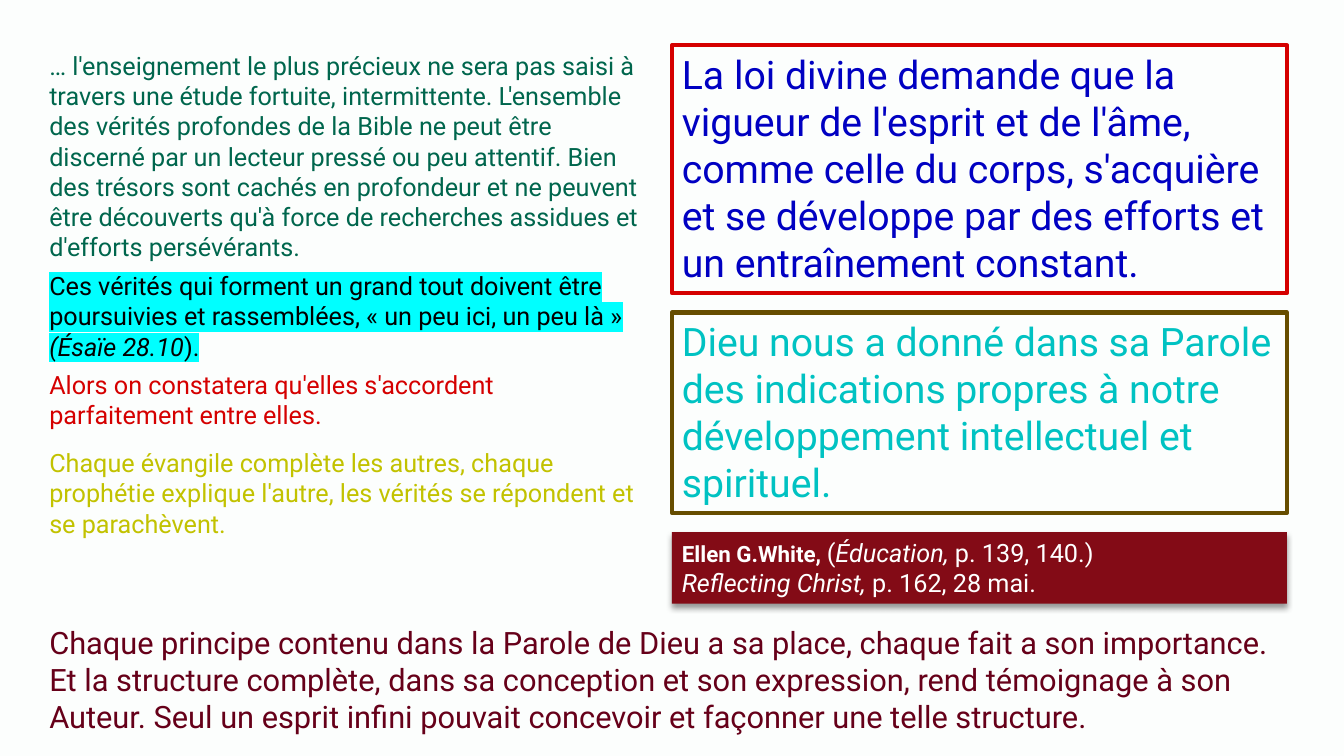
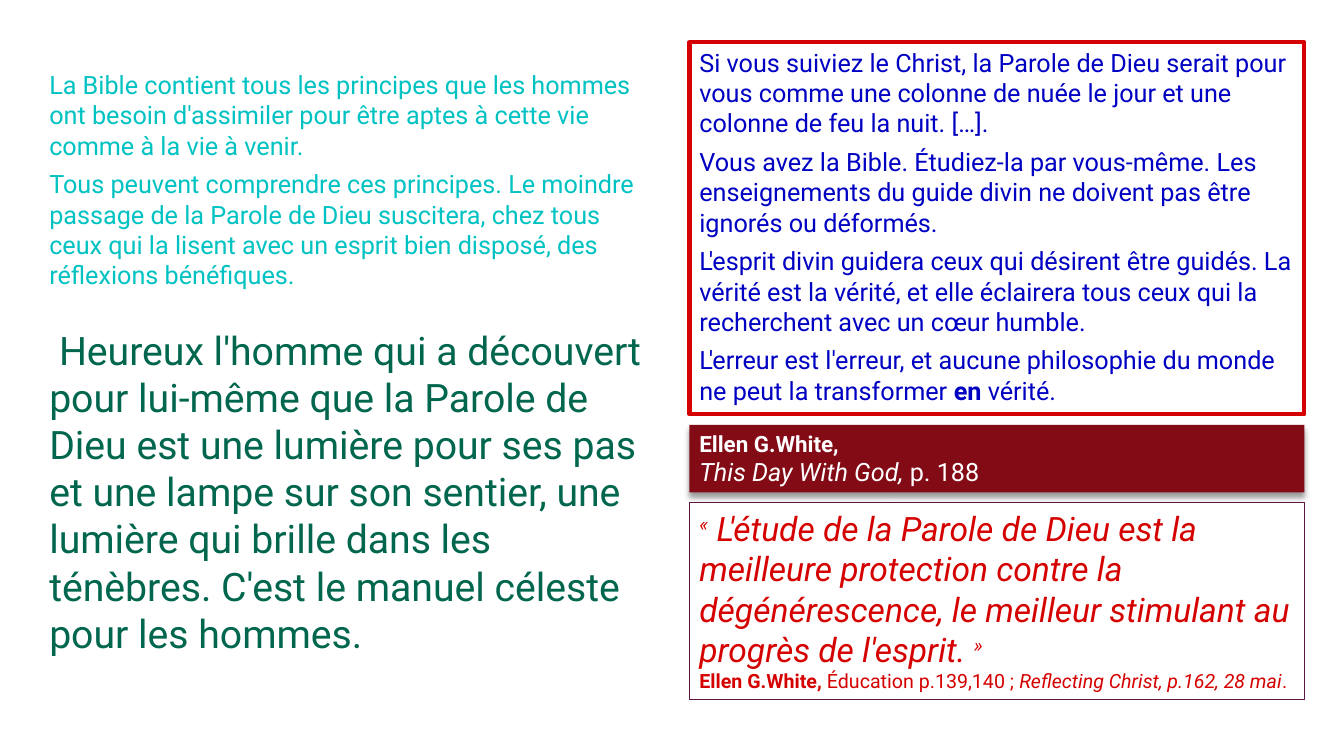
from dataclasses import dataclass

from lxml.etree import SubElement
from pptx import Presentation
from pptx.dml.color import RGBColor as RGB
from pptx.enum.shapes import MSO_SHAPE as SHAPE
from pptx.enum.text import MSO_ANCHOR as ANCHOR, MSO_AUTO_SIZE as AUTO, PP_ALIGN as ALIGN
from pptx.oxml.ns import qn
from pptx.util import Inches, Pt


@dataclass(frozen=True)
class Theme:
    """Colours, font and type sizes shared by the slides."""
    font: str = "Roboto"
    ivory: str = "FCFEFD"
    white: str = "FFFFFF"
    black: str = "000000"
    red: str = "D50000"
    blue: str = "0000C2"
    green: str = "00664D"
    cyan: str = "00C2C2"
    olive: str = "C2C200"
    brown: str = "664D00"
    wine: str = "660019"
    plum: str = "591643"
    band: str = "830B16"
    marker: str = "00FFFF"
    source: int = 14
    author: int = 16
    body: int = 18
    closing: int = 22
    quote: int = 24
    lead: int = 28


T = Theme()
WIDTH, HEIGHT = Inches(13.33), Inches(7.5)
LEFT, COLUMN, FULL = 2.93, 45.75, 92.87
ITALIC, BOLD = dict(italic=True), dict(bold=True)


def across(share):
    """Turn a percentage of the slide's width into a length."""
    return round(WIDTH * share / 100)


def down(share):
    """Turn a percentage of the slide's height into a length."""
    return round(HEIGHT * share / 100)


def add_run(p, text, size=T.body, color=T.black, bold=False, italic=False,
            highlight=None, raised=False):
    """Add one formatted run to a paragraph."""
    r = p.add_run()
    r.text = text
    r.font.size, r.font.bold, r.font.italic = Pt(size), bold, italic
    r.font.color.rgb = RGB.from_string(color)
    rPr = r._r.get_or_add_rPr()
    if highlight:
        mark = SubElement(rPr, qn("a:highlight"))
        SubElement(mark, qn("a:srgbClr"), val=highlight)
    if raised:
        rPr.set("baseline", "30000")
    r.font.name = T.font


def fill_text(sp, paragraphs, space=0, indent=0, **style):
    """Write paragraphs, each a list of strings or (string, format) pairs."""
    tf = sp.text_frame
    tf.word_wrap, tf.auto_size = True, AUTO.SHAPE_TO_FIT_TEXT
    tf.vertical_anchor = ANCHOR.TOP
    for i, runs in enumerate(paragraphs):
        p = tf.add_paragraph() if i else tf.paragraphs[0]
        p.alignment = ALIGN.LEFT
        if i and space:
            p.space_before = Pt(space)
        if indent:
            p._p.get_or_add_pPr().set("indent", str(Pt(indent)))
        for run in runs:
            text, extra = (run, {}) if isinstance(run, str) else run
            add_run(p, text, **{**style, **extra})


def add_text(s, box, paragraphs, **style):
    """Add plain text without a frame."""
    fill_text(s.shapes.add_textbox(*box), paragraphs, **style)


def add_panel(s, box, paragraphs, line, weight=3, **style):
    """Add text in an outlined rectangle."""
    sp = s.shapes.add_shape(SHAPE.RECTANGLE, *box)
    sp.shadow.inherit = False
    sp.fill.background()
    sp.line.color.rgb = RGB.from_string(line)
    sp.line.width = Pt(weight)
    fill_text(sp, paragraphs, **style)


def add_band(s, box, paragraphs):
    """Add a dark source band with a soft shadow."""
    sp = s.shapes.add_shape(SHAPE.RECTANGLE, *box)
    sp.shadow.inherit = False
    sp.fill.solid()
    sp.fill.fore_color.rgb = RGB.from_string(T.band)
    sp.line.fill.background()
    effects = sp._element.spPr.find(qn("a:effectLst"))
    shadow = SubElement(effects, qn("a:outerShdw"), blurRad=str(Pt(4)),
                        dist=str(Pt(3)), dir="5400000", rotWithShape="0")
    tint = SubElement(shadow, qn("a:srgbClr"), val=T.black)
    SubElement(tint, qn("a:alpha"), val="40000")
    fill_text(sp, paragraphs, color=T.white)


def stack(left, top, gap, heights, width=COLUMN):
    """Return boxes stacked down a column with equal gaps."""
    return [(across(left), down(top + sum(heights[:i]) + gap * i),
             across(width), down(height)) for i, height in enumerate(heights)]


def add_slide(prs, background):
    """Add a blank slide with a plain background."""
    s = prs.slides.add_slide(prs.slide_layouts[6])
    s.background.fill.solid()
    s.background.fill.fore_color.rgb = RGB.from_string(background)
    return s


def build_study(prs):
    """Build the slide on studying the Bible with effort."""
    s = add_slide(prs, T.ivory)
    truths, gospels = stack(LEFT, 6, 0.53, [52, 13.47])
    law, word, source = stack(50, 6, 2.53, [32.8, 26.53, 9.47])
    closing, = stack(LEFT, 81.87, 0, [16.13], FULL)
    marked = dict(color=T.black, highlight=T.marker)
    add_panel(s, law, [[
        "La loi divine demande que la vigueur de l'esprit et de l'âme, comme celle du corps, "
        "s'acquière et se développe par des efforts et un entraînement constant."]],
        line=T.red, size=T.lead, color=T.blue)
    add_text(s, truths, [
        ["… l'enseignement le plus précieux ne sera pas saisi à travers une étude fortuite, "
         "intermittente. L'ensemble des vérités profondes de la Bible ne peut être discerné "
         "par un lecteur pressé ou peu attentif. Bien des trésors sont cachés en profondeur "
         "et ne peuvent être découverts qu'à force de recherches assidues et d'efforts "
         "persévérants."],
        [("Ces vérités qui forment un grand tout doivent être poursuivies et rassemblées, "
          "« un peu ici, un peu là » ", marked),
         ("(Ésaïe 28.10", {**marked, **ITALIC}), (").", marked)],
        [("Alors on constatera qu'elles s'accordent parfaitement entre elles.",
          dict(color=T.red))]],
        space=6, color=T.green)
    add_panel(s, word, [[
        "Dieu nous a donné dans sa Parole des indications propres à notre développement "
        "intellectuel et spirituel."]],
        line=T.brown, size=T.lead, color=T.cyan)
    add_band(s, source, [
        [("Ellen G.White, ", dict(size=T.author, bold=True)), "(", ("Éducation,", ITALIC),
         " p. 139, 140.)"],
        [("Reflecting Christ,", ITALIC), " p. 162, 28 mai."]])
    add_text(s, gospels, [[
        "Chaque évangile complète les autres, chaque prophétie explique l'autre, les vérités "
        "se répondent et se parachèvent."]], color=T.olive)
    add_text(s, closing, [[
        "Chaque principe contenu dans la Parole de Dieu a sa place, chaque fait a son "
        "importance. Et la structure complète, dans sa conception et son expression, rend "
        "témoignage à son Auteur. Seul un esprit infini pouvait concevoir et façonner une "
        "telle structure."]], size=T.closing, color=T.wine)


def build_guide(prs):
    """Build the slide on the Bible as a guide."""
    s = add_slide(prs, T.white)
    principles, = stack(LEFT, 8.53, 0, [30.8])
    happy, = stack(LEFT, 42.53, 0, [45.33])
    guide, source, study = stack(51.3, 5.6, 1.4, [49.2, 8.93, 26])
    raised = dict(raised=True)
    note = dict(size=T.source, italic=False)
    add_text(s, principles, [
        ["La Bible contient tous les principes que les hommes ont besoin d'assimiler pour "
         "être aptes à cette vie comme à la vie à venir."],
        ["Tous peuvent comprendre ces principes. Le moindre passage de la Parole de Dieu "
         "suscitera, chez tous ceux qui la lisent avec un esprit bien disposé, des "
         "réflexions bénéfiques."]], space=6, color=T.cyan)
    add_panel(s, guide, [
        ["Si vous suiviez le Christ, la Parole de Dieu serait pour vous comme une colonne de "
         "nuée le jour et une colonne de feu la nuit. […]."],
        ["Vous avez la Bible. Étudiez-la par vous-même. Les enseignements du guide divin ne "
         "doivent pas être ignorés ou déformés."],
        ["L'esprit divin guidera ceux qui désirent être guidés. La vérité est la vérité, et "
         "elle éclairera tous ceux qui la recherchent avec un cœur humble."],
        ["L'erreur est l'erreur, et aucune philosophie du monde ne peut la transformer",
         (" en ", BOLD), "vérité."]],
        line=T.red, space=6, color=T.blue)
    add_text(s, happy, [[
        "Heureux l'homme qui a découvert pour lui-même que la Parole de Dieu est une lumière "
        "pour ses pas et une lampe sur son sentier, une lumière qui brille dans les ténèbres. "
        "C'est le manuel céleste pour les hommes."]],
        indent=7, size=T.lead, color=T.green)
    add_band(s, source, [
        [("Ellen G.White,", dict(size=T.author, bold=True))],
        [("This Day With God,", ITALIC), " p. 188"]])
    add_panel(s, study, [
        [("«", raised),
         " L'étude de la Parole de Dieu est la meilleure protection contre la "
         "dégénérescence, le meilleur stimulant au progrès de l'esprit. ",
         ("»", raised)],
        [("Ellen G.White, ", {**note, **BOLD}), ("Éducation p.139,140 ; ", note),
         ("Reflecting Christ, p.162, 28 mai", {**note, **ITALIC}), (".", note)]],
        line=T.plum, weight=0.75, size=T.quote, color=T.red, italic=True)


def main():
    """Build and save the presentation."""
    prs = Presentation()
    prs.slide_width, prs.slide_height = WIDTH, HEIGHT
    build_study(prs)
    build_guide(prs)
    prs.save("out.pptx")


if __name__ == "__main__":
    main()
